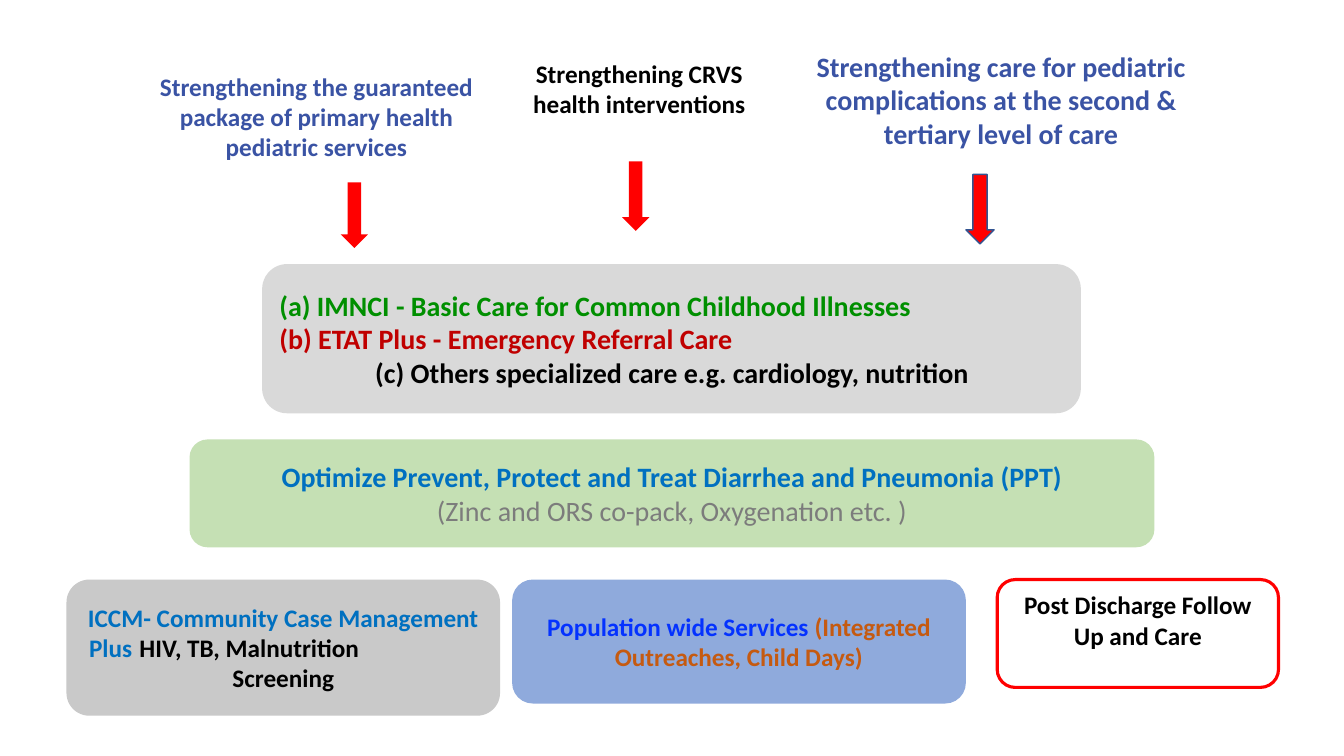
"""Builds the slide on strengthening child health care services."""
from dataclasses import dataclass

from pptx import Presentation
from pptx import util as u
from pptx.dml.color import RGBColor
from pptx.enum import shapes, text
from pptx.oxml import parse_xml
from pptx.oxml.ns import nsdecls


@dataclass(frozen=True)
class Theme:
    """Colours, type sizes and font of the slide."""
    font: str = "Calibri"
    large: int = 20
    small: int = 18
    black: str = "000000"
    white: str = "FFFFFF"
    red: str = "FF0000"
    indigo: str = "3A53A4"
    green: str = "008F00"
    crimson: str = "C00000"
    blue: str = "0070C0"
    vivid_blue: str = "0432FF"
    orange: str = "C55A11"
    grey_text: str = "7C7C7C"
    care_fill: str = "D9D9D9"
    community_fill: str = "C9C9C9"
    prevention_fill: str = "C5E0B4"
    population_fill: str = "8FAADC"
    arrow_edge: str = "325491"


THEME = Theme()
CENTER, LEFT = text.PP_ALIGN.CENTER, text.PP_ALIGN.LEFT
MIDDLE, TOP = text.MSO_ANCHOR.MIDDLE, text.MSO_ANCHOR.TOP


def line(*runs, align=CENTER, indent=0, tab=None):
    """Describe one paragraph from (wording, colour, bold) runs."""
    return {"runs": runs, "align": align, "indent": indent, "tab": tab}


def write(frame, lines, size, anchor):
    """Fill a text frame with the described paragraphs."""
    frame.word_wrap = True
    frame.vertical_anchor = anchor
    for index, entry in enumerate(lines):
        paragraph = frame.paragraphs[0] if index == 0 else frame.add_paragraph()
        paragraph.alignment = entry["align"]
        properties = paragraph._p.get_or_add_pPr()
        if entry["indent"]:
            properties.set("marL", str(u.Inches(entry["indent"])))
            properties.set("indent", "0")
        if entry["tab"]:
            properties.append(parse_xml(
                f'<a:tabLst {nsdecls("a")}>'
                f'<a:tab pos="{u.Inches(entry["tab"])}" algn="l"/></a:tabLst>'))
        for wording, color, bold in entry["runs"]:
            run = paragraph.add_run()
            run.text = wording
            formats = {"name": THEME.font, "size": u.Pt(size), "bold": bold}
            for name, value in formats.items():
                setattr(run.font, name, value)
            run.font.color.rgb = RGBColor.from_string(color)


def add_figure(slide, preset, place, fill=None, edge=None, edge_width=1):
    """Add a flat preset shape with optional fill and outline."""
    figure = slide.shapes.add_shape(preset, *map(u.Inches, place))
    figure.shadow.inherit = False
    if fill:
        figure.fill.solid()
        figure.fill.fore_color.rgb = RGBColor.from_string(fill)
    else:
        figure.fill.background()
    if edge:
        figure.line.color.rgb = RGBColor.from_string(edge)
        figure.line.width = u.Pt(edge_width)
    else:
        figure.line.fill.background()
    return figure


def add_panel(slide, place, lines, size, anchor=MIDDLE, **look):
    """Add a rounded panel holding text."""
    panel = add_figure(slide, shapes.MSO_SHAPE.ROUNDED_RECTANGLE, place, **look)
    write(panel.text_frame, lines, size, anchor)


def add_arrow(slide, place, edge=None):
    """Add a red arrow pointing down."""
    add_figure(slide, shapes.MSO_SHAPE.DOWN_ARROW, place, THEME.red, edge)


def add_label(slide, place, lines, size):
    """Add a plain text box."""
    label = slide.shapes.add_textbox(*map(u.Inches, place))
    write(label.text_frame, lines, size, TOP)


def add_goals(slide):
    """Add the three goals and their arrows."""
    t = THEME
    add_panel(slide, (1.41, 0.4, 3.46, 1.51), [line(
        ("Strengthening the guaranteed package of primary health pediatric services",
         t.indigo, True))], t.small)
    add_label(slide, (5.08, 0.53, 2.52, 1.01), [line(
        ("Strengthening CRVS health interventions", t.black, True))], t.small)
    add_panel(slide, (7.73, 0.25, 4.4, 1.48), [line(
        ("Strengthening care for pediatric complications at the second & "
         "tertiary level of care", t.indigo, True))], t.large)
    add_arrow(slide, (3.38, 1.81, 0.27, 0.65))
    add_arrow(slide, (6.17, 1.6, 0.27, 0.69))
    add_arrow(slide, (9.58, 1.73, 0.28, 0.69), t.arrow_edge)


def add_care_levels(slide):
    """Add the two wide panels on facility care and prevention."""
    t = THEME
    add_panel(slide, (2.6, 2.62, 8.12, 1.48), [
        line(("(a) IMNCI - Basic Care for Common Childhood Illnesses", t.green, True),
             align=LEFT),
        line(("(b) ETAT Plus - Emergency Referral Care", t.crimson, True), align=LEFT),
        line(("(c) Others specialized care e.g. cardiology, nutrition", t.black, True),
             align=LEFT, indent=0.95),
    ], t.large, fill=t.care_fill)
    add_panel(slide, (1.88, 4.36, 9.57, 1.07), [
        line(("Optimize Prevent, Protect and Treat Diarrhea and Pneumonia (PPT)",
              t.blue, True)),
        line(("(Zinc and ORS co-pack, Oxygenation etc. )", t.grey_text, False)),
    ], t.large, fill=t.prevention_fill)


def add_outreach(slide):
    """Add the bottom row of community services."""
    t = THEME
    add_panel(slide, (0.66, 5.75, 4.3, 1.35), [
        line(("ICCM- Community Case Management", t.blue, True)),
        line(("Plus\t", t.blue, True), ("HIV, TB, Malnutrition", t.black, True),
             align=LEFT, indent=0.06, tab=1.72),
        line(("Screening", t.black, True)),
    ], t.small, fill=t.community_fill)
    add_panel(slide, (5.08, 5.75, 4.5, 1.23), [line(
        ("Population wide Services ", t.vivid_blue, True),
        ("(Integrated Outreaches, Child Days)", t.orange, True),
    )], t.small, fill=t.population_fill)
    add_panel(slide, (9.89, 5.75, 2.79, 1.07), [line(
        ("Post Discharge Follow Up and Care", t.black, True),
    )], t.small, TOP, fill=t.white, edge=t.red, edge_width=2.25)


def main():
    """Build and save the slide."""
    deck = Presentation()
    deck.slide_width, deck.slide_height = u.Inches(13.33), u.Inches(7.5)
    slide = deck.slides.add_slide(deck.slide_layouts[6])
    add_goals(slide)
    add_care_levels(slide)
    add_outreach(slide)
    deck.save("out.pptx")


if __name__ == "__main__":
    main()
